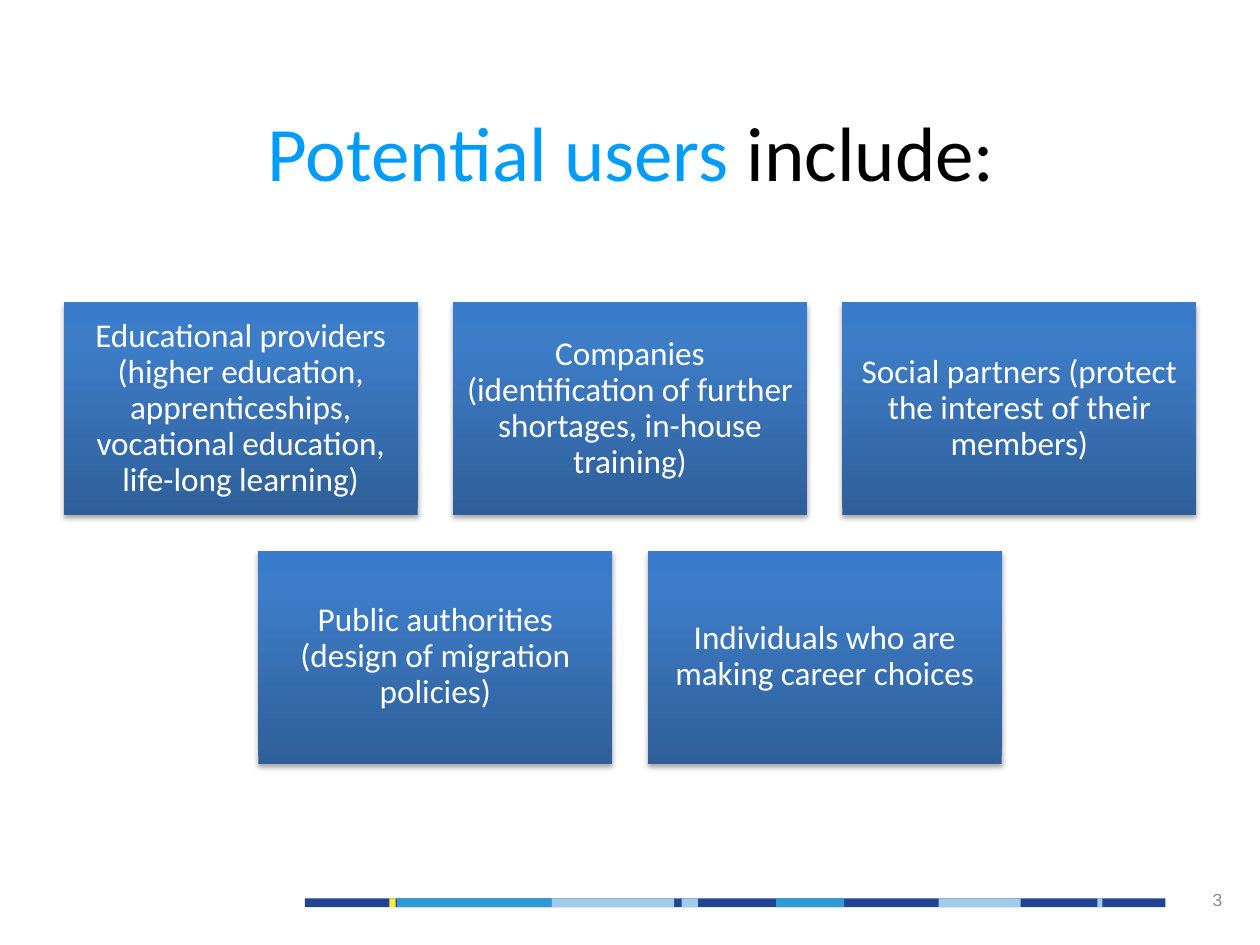
"""Build a slide listing the potential users as a centred grid of boxes."""
from dataclasses import dataclass

from lxml.etree import SubElement
from pptx import Presentation
from pptx.dml.color import RGBColor as RGB
from pptx.enum.shapes import MSO_SHAPE as SHAPE
from pptx.enum.text import MSO_ANCHOR as ANCHOR, MSO_AUTO_SIZE as AUTO, PP_ALIGN as ALIGN
from pptx.oxml.ns import qn
from pptx.util import Inches, Pt


@dataclass(frozen=True)
class Theme:
    font: str = "Calibri"
    number_font: str = "Arial"
    title_size: float = 44
    box_size: float = 19
    number_size: float = 10
    accent: str = "009CFA"
    ink: str = "000000"
    box_text: str = "FFFFFF"
    number: str = "8C8C8C"
    navy: str = "204491"
    yellow: str = "FFEE35"
    blue: str = "309AD5"
    pale: str = "A0CBEB"
    gradient: tuple = ((0, "2F5F99"), (80, "3D7CC7"), (100, "3A7CCB"))


T = Theme()
TITLE = [("Potential users ", T.accent), ("include:", T.ink)]
USERS = [
    ["Educational providers (higher education, apprenticeships, vocational education, "
     "life-long learning)",
     "Companies (identification of further shortages, in-house training)",
     "Social partners (protect the interest of their members)"],
    ["Public authorities (design of migration policies)",
     "Individuals who are making career choices"],
]
STRIPES = [
    (2.42, 6.83, T.navy), (3.09, 0.05, T.yellow), (3.15, 1.24, T.blue),
    (4.38, 0.97, T.pale), (5.41, 0.13, T.pale), (6.16, 0.54, T.blue),
    (7.45, 0.65, T.pale), (8.71, 0.04, T.pale),
]
STRIPE_TOP, STRIPE_H = 7.13, 0.07
SLIDE_W, SLIDE_H = 10, 7.5
BOX_W, BOX_H, GAP, GRID_TOP, INSET = 2.81, 1.69, 0.28, 2.4, 0.08


def style(r, font, size, color):
    r.font.name, r.font.size = font, Pt(size)
    r.font.color.rgb = RGB.from_string(color)


def add_rect(slide, x, y, w, h):
    sp = slide.shapes.add_shape(SHAPE.RECTANGLE, *map(Inches, (x, y, w, h)))
    sp.line.fill.background()
    sp.shadow.inherit = False
    return sp


def add_gradient(sp):
    sp.fill.gradient()
    sp.fill.gradient_angle = 90
    stops = sp._element.spPr.find(".//" + qn("a:gsLst"))
    for old in list(stops):
        stops.remove(old)
    for pos, color in T.gradient:
        gs = SubElement(stops, qn("a:gs"), pos=str(pos * 1000))
        SubElement(gs, qn("a:srgbClr"), val=color)


def add_shadow(sp):
    effects = sp._element.spPr.find(qn("a:effectLst"))
    shadow = SubElement(effects, qn("a:outerShdw"), blurRad=str(Pt(3.1)), dist=str(Pt(1.8)),
                        dir="5400000", rotWithShape="0")
    color = SubElement(shadow, qn("a:srgbClr"), val="000000")
    SubElement(color, qn("a:alpha"), val="35000")


def add_user_box(slide, x, y, text):
    sp = add_rect(slide, x, y, BOX_W, BOX_H)
    add_gradient(sp)
    add_shadow(sp)
    tf = sp.text_frame
    tf.word_wrap, tf.vertical_anchor = True, ANCHOR.MIDDLE
    tf.margin_left = tf.margin_right = tf.margin_top = tf.margin_bottom = Inches(INSET)
    tf.text = text
    p = tf.paragraphs[0]
    p.alignment, p.line_spacing = ALIGN.CENTER, 0.9
    style(p.runs[0], T.font, T.box_size, T.box_text)


def add_title(slide):
    sp = slide.shapes.title
    sp.left, sp.top, sp.width, sp.height = map(Inches, (0.51, 0.78, 9, 1.25))
    tf = sp.text_frame
    tf.word_wrap, tf.auto_size, tf.vertical_anchor = True, AUTO.NONE, ANCHOR.TOP
    p = tf.paragraphs[0]
    p.alignment = ALIGN.CENTER
    for text, color in TITLE:
        r = p.add_run()
        r.text = text
        style(r, T.font, T.title_size, color)


def add_number(slide, text):
    tf = slide.shapes.add_textbox(*map(Inches, (7.47, 6.94, 2.33, 0.4))).text_frame
    tf.word_wrap, tf.vertical_anchor = True, ANCHOR.MIDDLE
    tf.text = text
    p = tf.paragraphs[0]
    p.alignment = ALIGN.RIGHT
    style(p.runs[0], T.number_font, T.number_size, T.number)


def main():
    prs = Presentation()
    prs.slide_width, prs.slide_height = Inches(SLIDE_W), Inches(SLIDE_H)
    slide = prs.slides.add_slide(prs.slide_layouts[5])
    for x, w, color in STRIPES:
        sp = add_rect(slide, x, STRIPE_TOP, w, STRIPE_H)
        sp.fill.solid()
        sp.fill.fore_color.rgb = RGB.from_string(color)
    add_number(slide, "3")
    add_title(slide)
    for i, row in enumerate(USERS):
        left = (SLIDE_W - len(row) * BOX_W - (len(row) - 1) * GAP) / 2
        for j, text in enumerate(row):
            add_user_box(slide, left + j * (BOX_W + GAP), GRID_TOP + i * (BOX_H + GAP), text)
    prs.save("out.pptx")


if __name__ == "__main__":
    main()
